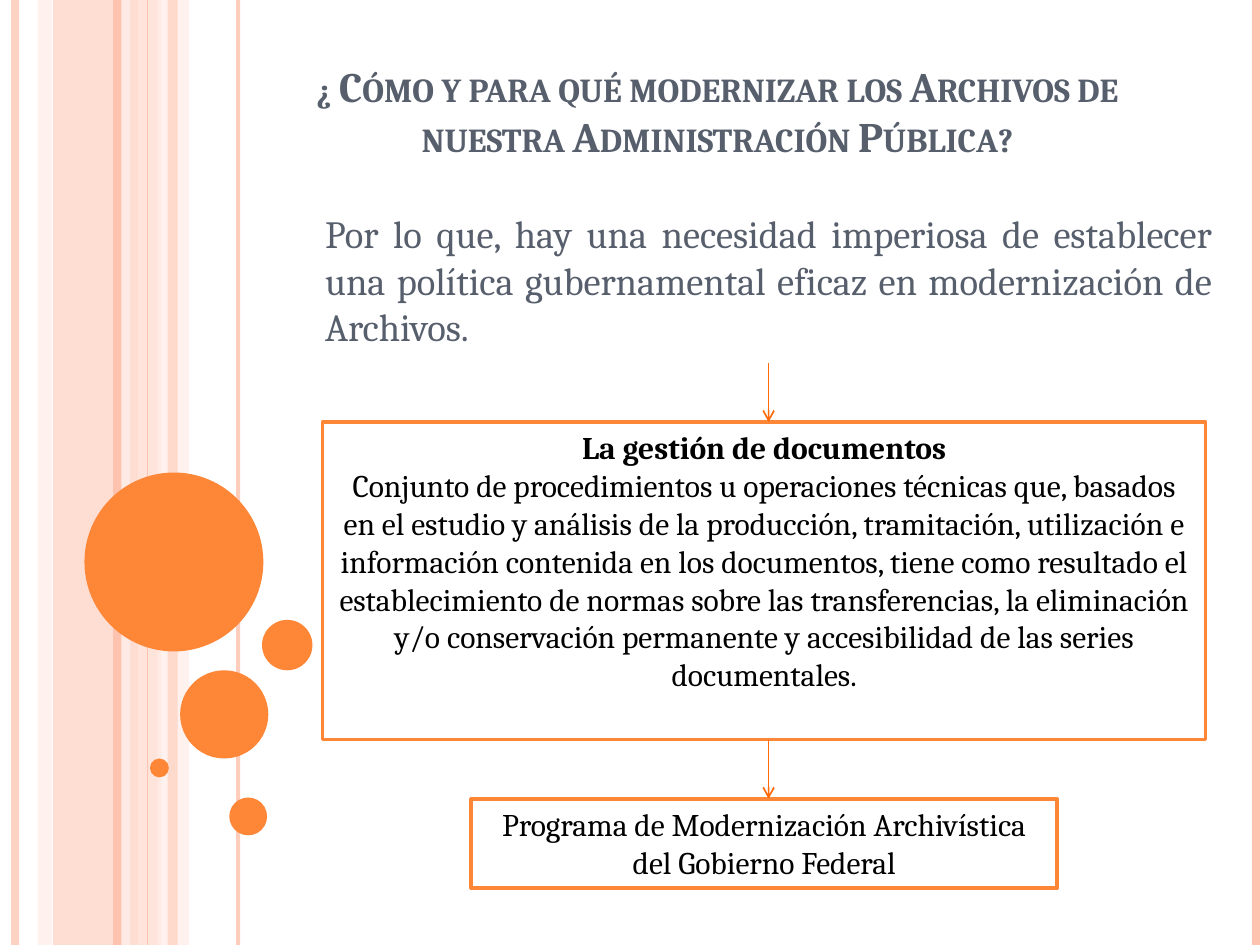
from lxml.etree import SubElement
from pptx import Presentation
from pptx.dml.color import RGBColor
from pptx.enum.shapes import MSO_CONNECTOR, MSO_SHAPE
from pptx.enum.text import MSO_ANCHOR, MSO_AUTO_SIZE, PP_ALIGN
from pptx.oxml.ns import qn
from pptx.util import Inches, Pt

WIDE, HIGH = 10, 7.5
ORANGE, ROSE, PALE, MIST = "FE8637", "FEC3AE", "FFD9CE", "FFEDE8"
SLATE, BLACK, WHITE = "575F6D", "000000", "FFFFFF"

# Left, width, colour, opacity
BANDS = [(0.42, 0.67, ROSE, 54), (0.3, 0.11, PALE, 36),
         (1.08, 0.2, PALE, 70), (1.25, 0.25, MIST, 71)]
TOP_BAND = (1.33, 0.08, ROSE, 51)
# Position, colour, weight, opacity
RULES = [(0.12, ROSE, 4.5, 73), (1, MIST, 4.5, 83), (0.93, ROSE, 4.5, 100),
         (1.89, ROSE, 2.25, 82), (1.17, ROSE, 0.75, 100),
         (9.97, ROSE, 4.5, 100)]
# Left, top, diameter
DOTS = [(0.67, 3.75, 1.42), (1.43, 5.32, 0.7), (1.19, 6.02, 0.15),
        (1.82, 6.33, 0.3), (2.08, 4.92, 0.4)]


def paint(fill, hue, alpha=100):
    fill.solid()
    fill.fore_color.rgb = RGBColor.from_string(hue)
    if alpha < 100:
        tint = next(fill._xPr.iter(qn("a:srgbClr")))
        SubElement(tint, qn("a:alpha"), val=str(alpha * 1000))


def place(shape, box):
    shape.left, shape.top, shape.width, shape.height = map(Inches, box)


def write(frame, text, size=18, hue=BLACK, bold=False, caps=False,
          align=PP_ALIGN.CENTER, before=0, more=False):
    para = frame.add_paragraph() if more else frame.paragraphs[0]
    para.alignment, para.space_before = align, Pt(before)
    run = para.add_run()
    run.text = text
    font = run.font
    font.name, font.size, font.bold = "Cambria", Pt(size), bold
    font.color.rgb = RGBColor.from_string(hue)
    if caps:
        font._element.set("cap", "small")


def draw(slide, kind, box, hue, alpha=100, edge=None):
    shape = slide.shapes.add_shape(kind, *map(Inches, box))
    shape.shadow.inherit = False
    paint(shape.fill, hue, alpha)
    if edge:
        paint(shape.line.fill, edge)
        shape.line.width = Pt(2)
    else:
        shape.line.fill.background()
    return shape


def drop(slide, x, top, end, hue, weight=1, alpha=100, arrow=False):
    """Vertical line from top to end."""
    line = slide.shapes.add_connector(
        MSO_CONNECTOR.STRAIGHT, *map(Inches, (x, top, x, end)))
    paint(line.line.fill, hue, alpha)
    line.line.width = Pt(weight)
    if arrow:
        SubElement(line.line._get_or_add_ln(), qn("a:tailEnd"), type="arrow")
    SubElement(line._element.spPr, qn("a:effectLst"))


def backdrop(slide):
    def band(x, width, hue, alpha):
        draw(slide, MSO_SHAPE.RECTANGLE, (x, 0, width, HIGH), hue, alpha)

    for item in BANDS:
        band(*item)
    for x, hue, weight, alpha in RULES:
        drop(slide, x, 0, HIGH, hue, weight, alpha)
    band(*TOP_BAND)
    for x, y, size in DOTS:
        draw(slide, MSO_SHAPE.OVAL, (x, y, size, size), ORANGE)


def holder(slide, shape, box, anchor, text, **style):
    """Fill a placeholder and bring it in front of the backdrop."""
    place(shape, box)
    slide.shapes._spTree.append(shape._element)
    frame = shape.text_frame
    frame.word_wrap, frame.auto_size = True, MSO_AUTO_SIZE.NONE
    frame.vertical_anchor = anchor
    write(frame, text, hue=SLATE, **style)


def panel(slide, box, *parts):
    """Outlined box with one paragraph per (text, bold) part."""
    shape = draw(slide, MSO_SHAPE.RECTANGLE, box, WHITE, edge=ORANGE)
    frame = shape.text_frame
    frame.word_wrap, frame.vertical_anchor = True, MSO_ANCHOR.TOP
    for i, (text, bold) in enumerate(parts):
        write(frame, text, bold=bold, more=i > 0)


def flow(slide, x, top):
    """Chain of two panels, each entered by an arrow on the axis x."""
    gap = 0.47
    main = (2.56, top + gap, 7.01, 2.52)
    last = (3.74, main[1] + main[3] + gap, 4.65, 0.71)
    panel(slide, main, ("La gestión de documentos", True), (
        "Conjunto de procedimientos u operaciones técnicas que, basados en el "
        "estudio y análisis de la producción, tramitación, utilización e "
        "información contenida en los documentos, tiene como resultado el "
        "establecimiento de normas sobre las transferencias, la eliminación "
        "y/o conservación permanente y accesibilidad de las series "
        "documentales.", False))
    panel(slide, last, (
        "Programa de Modernización Archivística del Gobierno Federal", False))
    for box in (main, last):
        drop(slide, x, box[1] - gap, box[1], "FF6B0A", arrow=True)


def main():
    deck = Presentation()
    deck.slide_width, deck.slide_height = Inches(WIDE), Inches(HIGH)
    slide = deck.slides.add_slide(deck.slide_layouts[0])
    backdrop(slide)
    # Heading and lead text
    holder(slide, slide.shapes.title, (2.32, 0.29, 6.75, 1.04),
           MSO_ANCHOR.BOTTOM,
           "¿ Cómo y para qué modernizar los Archivos de nuestra "
           "Administración Pública?", size=24, bold=True, caps=True)
    holder(slide, slide.placeholders[1], (2.48, 1.62, 7.24, 5.28),
           MSO_ANCHOR.TOP,
           "Por lo que, hay una necesidad imperiosa de establecer una "
           "política gubernamental eficaz en modernización de Archivos.",
           size=22, align=PP_ALIGN.JUSTIFY, before=6)
    flow(slide, 6.1, 2.88)
    deck.save("out.pptx")


if __name__ == "__main__":
    main()
